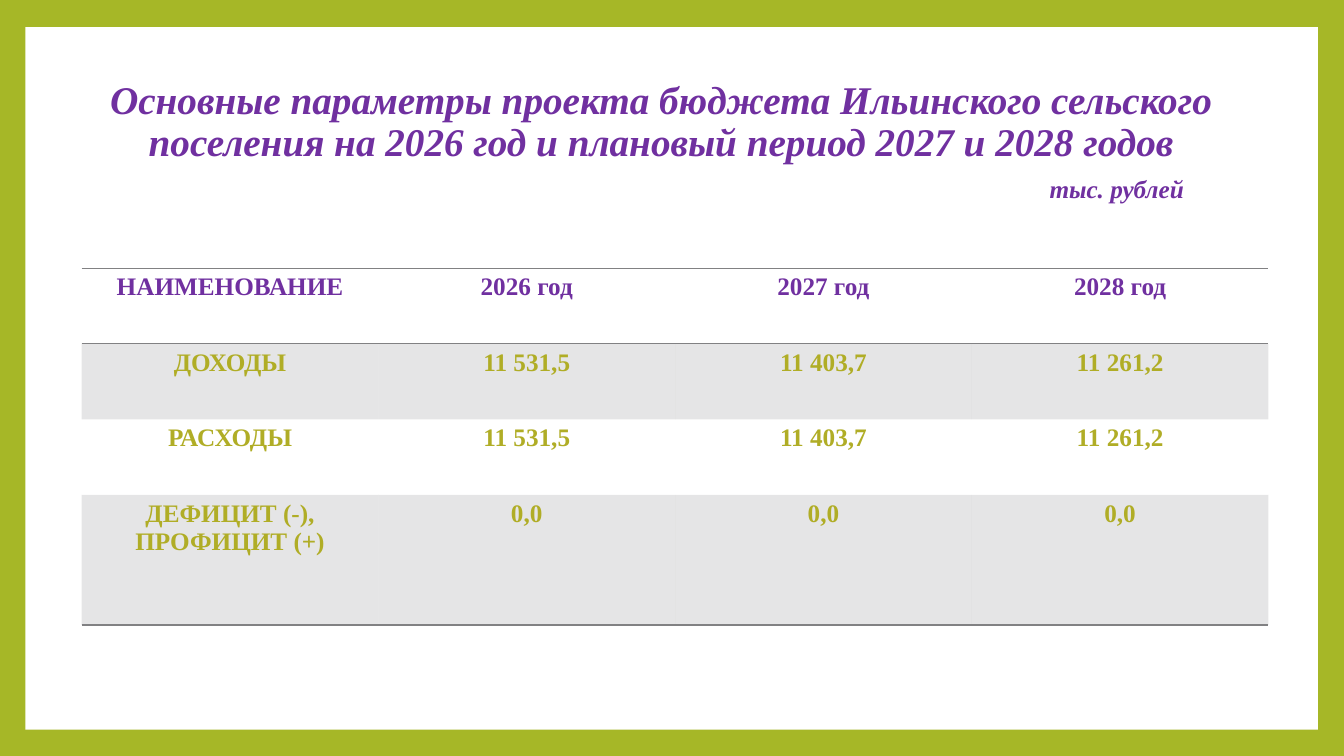
from dataclasses import dataclass

from lxml.etree import SubElement
from pptx import Presentation
from pptx.dml.color import RGBColor as Rgb
from pptx.enum.shapes import MSO_SHAPE as Kind
from pptx.enum.text import MSO_ANCHOR as Anchor, PP_ALIGN as Align
from pptx.oxml.ns import qn
from pptx.util import Inches, Pt


@dataclass(frozen=True)
class Theme:
    font: str = "Times New Roman"
    green: str = "A6B727"
    white: str = "FFFFFF"
    violet: str = "7030A0"
    olive: str = "B0AD26"
    gray: str = "818183"
    large: int = 28
    small: int = 18


THEME = Theme()
WIDE, HIGH = Inches(13.33), Inches(7.5)
BAND = 20
ROWS = [
    ("НАИМЕНОВАНИЕ", "2026 год", "2027 год", "2028 год"),
    ("ДОХОДЫ", "11 531,5", "11 403,7", "11 261,2"),
    ("РАСХОДЫ", "11 531,5", "11 403,7", "11 261,2"),
    ("ДЕФИЦИТ (-), ПРОФИЦИТ (+)", "0,0", "0,0", "0,0"),
]
TALL = (10, 10, 10, 17.2)


def across(share):
    return round(WIDE * share / 100)


def down(share):
    return round(HIGH * share / 100)


def area(left, top, width, height):
    return across(left), down(top), across(width), down(height)


def add_run(para, text, size, color, slant=False):
    run = para.add_run()
    run.text = text
    font = run.font
    font.name, font.size = THEME.font, Pt(size)
    font.bold, font.italic = True, slant
    font.color.rgb = Rgb.from_string(color)


def add_panel(slide, box):
    panel = slide.shapes.add_shape(Kind.RECTANGLE, *box)
    panel.shadow.inherit = False
    panel.fill.solid()
    panel.fill.fore_color.rgb = Rgb.from_string(THEME.white)
    panel.line.fill.background()


def add_title(slide, box, title, unit, indent):
    frame = slide.shapes.add_textbox(*box).text_frame
    frame.word_wrap = True
    frame.vertical_anchor = Anchor.MIDDLE
    head = frame.paragraphs[0]
    head.alignment, head.line_spacing = Align.CENTER, 0.9
    add_run(head, title, THEME.large, THEME.violet, True)
    note = frame.add_paragraph()
    note.alignment, note.line_spacing = Align.LEFT, 0.9
    note.space_before = Pt(8)
    note._p.get_or_add_pPr().set("marL", str(across(indent)))
    add_run(note, unit, THEME.small, THEME.violet, True)


def set_edge(cell, side, color):
    props = cell._tc.get_or_add_tcPr()
    edge = SubElement(props, qn(f"a:ln{side}"), w=str(Pt(1)))
    if color:
        fill = SubElement(edge, qn("a:solidFill"))
        SubElement(fill, qn("a:srgbClr"), val=color)
    else:
        SubElement(edge, qn("a:noFill"))


def set_fill(cell, shaded):
    if not shaded:
        cell.fill.background()
        return
    cell.fill.solid()
    cell.fill.fore_color.rgb = Rgb.from_string(THEME.gray)
    tint = cell._tc.tcPr.find(f".//{qn('a:solidFill')}[last()]")
    tint = cell._tc.tcPr.find(f"{qn('a:solidFill')}/{qn('a:srgbClr')}")
    SubElement(tint, qn("a:alpha"), val=str(BAND * 1000))


def fill_cell(cell, text, row):
    last = len(ROWS) - 1
    ruled = {"T": row in (0, 1), "B": row in (0, last)}
    for side in "LRTB":
        set_edge(cell, side, THEME.gray if ruled.get(side) else None)
    set_fill(cell, row % 2 == 1)
    cell.margin_left = cell.margin_right = Inches(0.08)
    cell.margin_top = cell.margin_bottom = Inches(0.05)
    para = cell.text_frame.paragraphs[0]
    para.alignment = Align.CENTER
    add_run(para, text, THEME.small, THEME.olive if row else THEME.violet)


def add_grid(slide, left, top, width):
    box = area(left, top, width, sum(TALL))
    grid = slide.shapes.add_table(len(ROWS), len(ROWS[0]), *box).table
    grid.first_row = grid.horz_banding = False
    for row, texts in enumerate(ROWS):
        grid.rows[row].height = down(TALL[row])
        for col, text in enumerate(texts):
            fill_cell(grid.cell(row, col), text, row)


def main():
    deck = Presentation()
    deck.slide_width, deck.slide_height = WIDE, HIGH
    slide = deck.slides.add_slide(deck.slide_layouts[6])
    back = slide.background.fill
    back.solid()
    back.fore_color.rgb = Rgb.from_string(THEME.green)
    add_panel(slide, area(1.88, 3.6, 96.17, 92.93))
    add_title(
        slide,
        area(3.23, 8.93, 91.9, 19.73),
        "Основные параметры проекта бюджета Ильинского сельского "
        "поселения на 2026 год и плановый период 2027 и 2028 годов",
        "тыс. рублей",
        74.12,
    )
    add_grid(slide, 6.08, 35.47, 88.3)
    deck.save("out.pptx")


if __name__ == "__main__":
    main()
